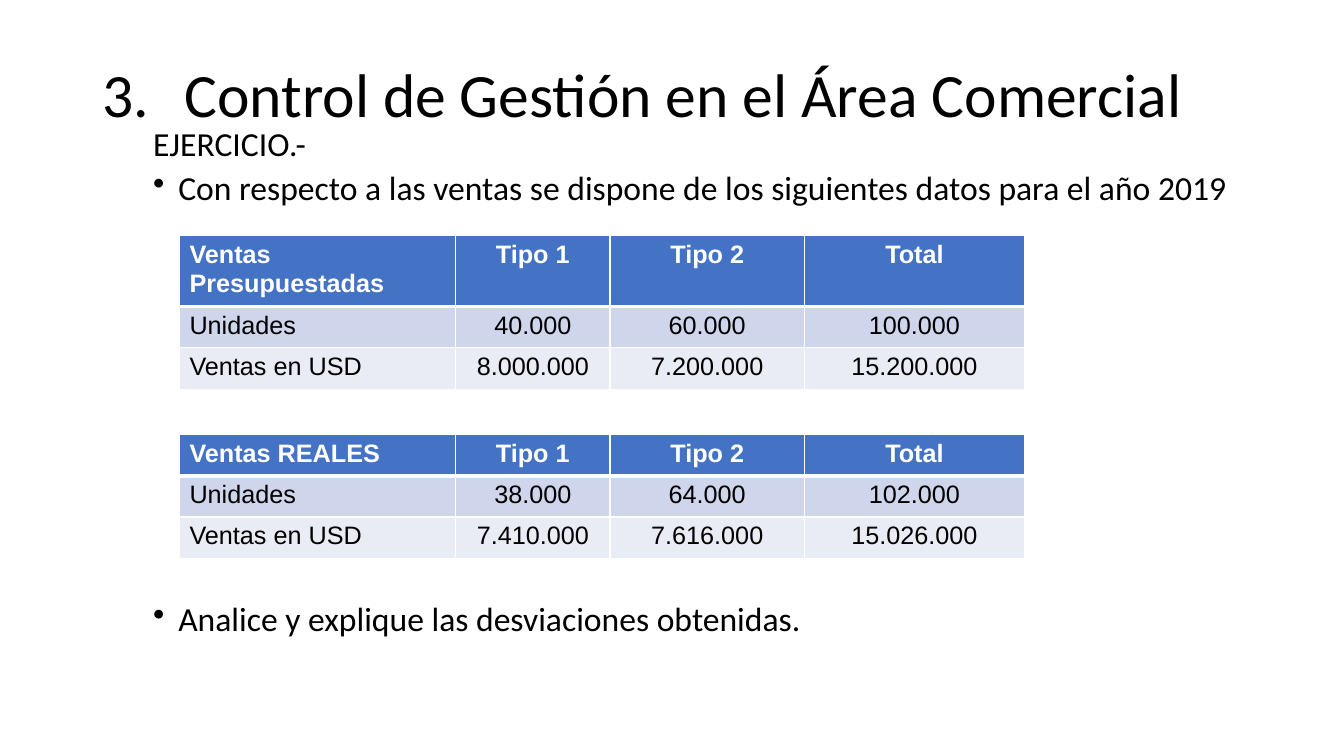
import pptx
import pptx.util
import pptx.dml.color
import pptx.enum.text
from lxml import etree

# Content
TITLE = "Control de Gestión en el Área Comercial"
TITLE_NUMBER = 3
INTRODUCTION = [
    ("EJERCICIO.-", False),
    ("Con respecto a las ventas se dispone de los siguientes datos para el año 2019", True),
]
QUESTION = [("Analice y explique las desviaciones obtenidas.", True)]
TYPES = ["Tipo 1", "Tipo 2", "Total"]
SALES_TABLES = [
    [["Ventas Presupuestadas", *TYPES],
     ["Unidades", "40.000", "60.000", "100.000"],
     ["Ventas en USD", "8.000.000", "7.200.000", "15.200.000"]],
    [["Ventas REALES", *TYPES],
     ["Unidades", "38.000", "64.000", "102.000"],
     ["Ventas en USD", "7.410.000", "7.616.000", "15.026.000"]],
]

# Theme
THEME = {
    "text_font": "Calibri", "table_font": "Arial",
    "title": 44, "body": 24, "table": 18,
    "ink": "000000", "white": "FFFFFF",
    "rows": ["4472C4", "CFD5EA", "E9EBF5"],
    "thin": 1, "thick": 3,
}

# Layout, in inches
SLIDE_WIDTH, SLIDE_HEIGHT = 13.33, 7.5
TEXT_LEFT, TEXT_WIDTH = 0.92, 11.5
TITLE_TOP, TITLE_HEIGHT, TITLE_INDENT = 0.4, 1.13, 0.81
INTRODUCTION_TOP, INTRODUCTION_HEIGHT = 1.22, 1
QUESTION_TOP, QUESTION_HEIGHT = 5.93, 0.6
BODY_INDENT, BULLET_GAP = 0.5, 0.25
TABLE_LEFT, TABLE_TOP, TABLE_STEP = 1.78, 2.34, 1.97
COLUMN_WIDTHS, ROW_HEIGHT = [2.74, 1.53, 1.93, 2.18], 0.41

Inches, Pt = pptx.util.Inches, pptx.util.Pt
ALIGN = pptx.enum.text.PP_ALIGN
color = pptx.dml.color.RGBColor.from_string


def add_run(paragraph, text, size, font, ink, bold=False):
    run = paragraph.add_run()
    run.text = text
    run.font.size, run.font.name, run.font.bold = Pt(size), font, bold
    run.font.color.rgb = color(ink)


def set_indent(paragraph, left, hanging, marker=None, **attributes):
    properties = paragraph._p.get_or_add_pPr()
    properties.set("marL", str(Inches(left)))
    properties.set("indent", str(-Inches(hanging)))
    if marker:
        etree.SubElement(properties, pptx.oxml.ns.qn("a:" + marker), attributes)


def add_text_frame(slide, top, height):
    box = slide.shapes.add_textbox(Inches(TEXT_LEFT), Inches(top), Inches(TEXT_WIDTH), Inches(height))
    box.text_frame.word_wrap = True
    return box.text_frame


def add_title(slide):
    frame = add_text_frame(slide, TITLE_TOP, TITLE_HEIGHT)
    frame.vertical_anchor = pptx.enum.text.MSO_ANCHOR.MIDDLE
    paragraph = frame.paragraphs[0]
    set_indent(paragraph, TITLE_INDENT, TITLE_INDENT, "buAutoNum",
               type="arabicPeriod", startAt=str(TITLE_NUMBER))
    paragraph.line_spacing = 0.9
    add_run(paragraph, TITLE, THEME["title"], THEME["text_font"], THEME["ink"])


def add_body(slide, lines, top, height):
    frame = add_text_frame(slide, top, height)
    for index, (text, bulleted) in enumerate(lines):
        paragraph = frame.add_paragraph() if index else frame.paragraphs[0]
        if bulleted:
            set_indent(paragraph, BODY_INDENT + BULLET_GAP, BULLET_GAP, "buChar", char="•")
        else:
            set_indent(paragraph, BODY_INDENT, 0)
        paragraph.line_spacing = 0.9
        if index:
            paragraph.space_before = Pt(5)
        add_run(paragraph, text, THEME["body"], THEME["text_font"], THEME["ink"])


def set_borders(cell, widths):
    properties = cell._tc.get_or_add_tcPr()
    for position, (side, width) in enumerate(widths.items()):
        line = etree.Element(pptx.oxml.ns.qn("a:ln" + side), w=str(Pt(width)))
        fill = etree.SubElement(line, pptx.oxml.ns.qn("a:solidFill"))
        etree.SubElement(fill, pptx.oxml.ns.qn("a:srgbClr"), val=THEME["white"])
        properties.insert(position, line)


def add_sales_table(slide, rows, top):
    table = slide.shapes.add_table(
        len(rows), len(COLUMN_WIDTHS), Inches(TABLE_LEFT), Inches(top),
        Inches(sum(COLUMN_WIDTHS)), Inches(ROW_HEIGHT * len(rows))).table
    for column, width in zip(table.columns, COLUMN_WIDTHS):
        column.width = Inches(width)
    for row_index, row in enumerate(rows):
        table.rows[row_index].height = Inches(ROW_HEIGHT)
        header = row_index == 0
        for column_index, text in enumerate(row):
            cell = table.cell(row_index, column_index)
            cell.fill.solid()
            cell.fill.fore_color.rgb = color(THEME["rows"][row_index])
            borders = dict.fromkeys("LRTB", THEME["thin"])
            if header:
                borders["B"] = THEME["thick"]
            elif row_index == 1:
                borders["T"] = THEME["thick"]
            set_borders(cell, borders)
            paragraph = cell.text_frame.paragraphs[0]
            paragraph.alignment = ALIGN.CENTER if column_index else ALIGN.LEFT
            add_run(paragraph, text, THEME["table"], THEME["table_font"],
                    THEME["white"] if header else THEME["ink"], header)


def main():
    presentation = pptx.Presentation()
    presentation.slide_width = Inches(SLIDE_WIDTH)
    presentation.slide_height = Inches(SLIDE_HEIGHT)
    slide = presentation.slides.add_slide(presentation.slide_layouts[6])
    add_title(slide)
    add_body(slide, INTRODUCTION, INTRODUCTION_TOP, INTRODUCTION_HEIGHT)
    for index, rows in enumerate(SALES_TABLES):
        add_sales_table(slide, rows, TABLE_TOP + index * TABLE_STEP)
    add_body(slide, QUESTION, QUESTION_TOP, QUESTION_HEIGHT)
    presentation.save("out.pptx")


if __name__ == "__main__":
    main()
